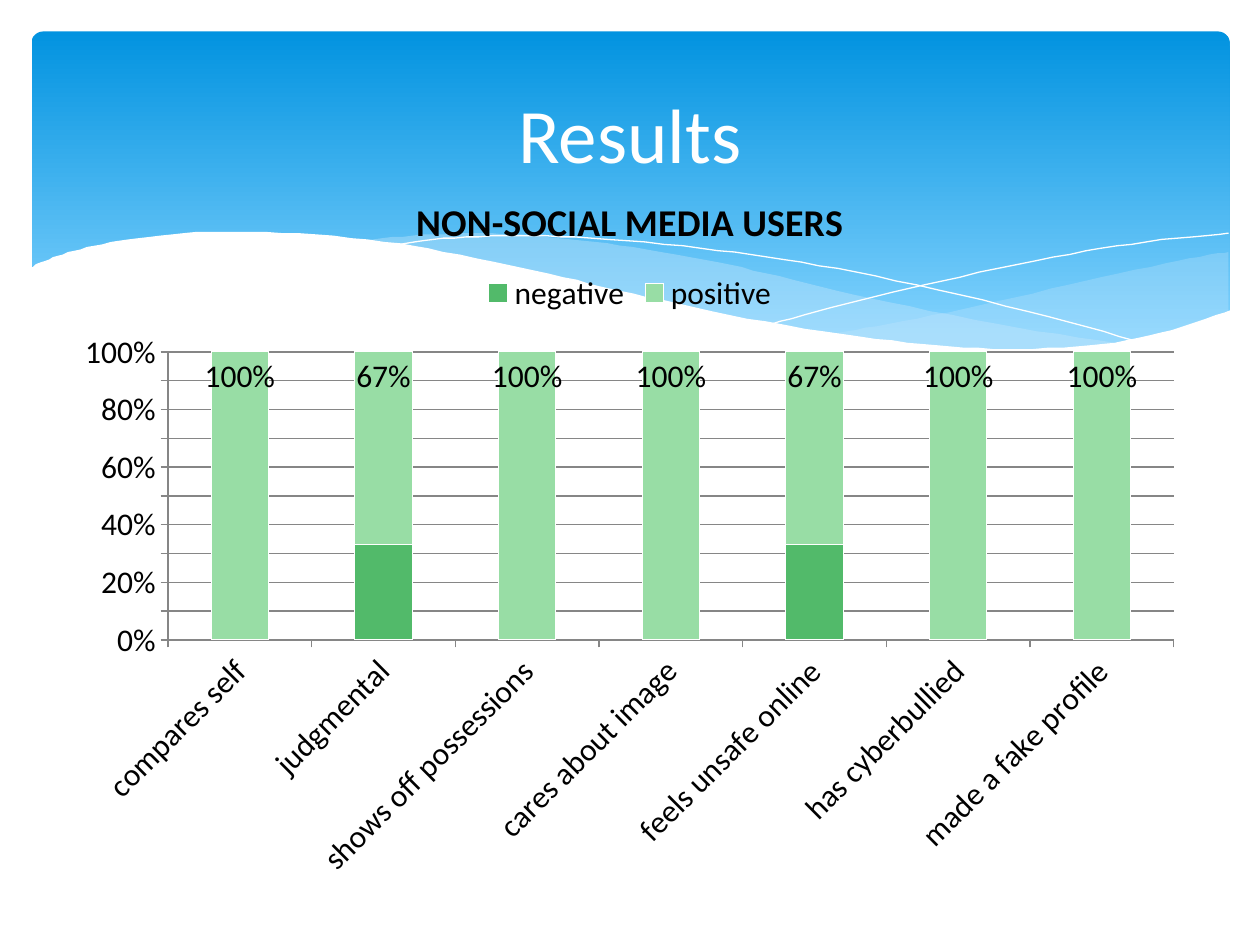
from dataclasses import dataclass
from lxml.etree import SubElement
from pptx import Presentation
from pptx.chart.data import CategoryChartData
from pptx.dml.color import RGBColor
from pptx.enum.chart import XL_CHART_TYPE as ChartType, XL_LABEL_POSITION as LabelPos
from pptx.enum.chart import XL_LEGEND_POSITION as LegendPos, XL_TICK_MARK as Tick
from pptx.enum.shapes import MSO_SHAPE as Preset
from pptx.enum.text import MSO_ANCHOR as Anchor, PP_ALIGN as Align
from pptx.oxml import parse_xml
from pptx.oxml.ns import nsdecls, qn
from pptx.util import Inches, Pt

WHITE = RGBColor(0xFF, 0xFF, 0xFF)
BLACK = RGBColor(0x00, 0x00, 0x00)
GREY = RGBColor(0x86, 0x86, 0x86)
SKY = RGBColor(0x02, 0x93, 0xE0)
PALE_SKY = RGBColor(0x83, 0xD3, 0xFE)
MIST = RGBColor(0xC6, 0xE7, 0xFC)
GREEN = RGBColor(0x52, 0xBA, 0x6A)
PALE_GREEN = RGBColor(0x98, 0xDD, 0xA5)
FONT = "Calibri"
CELL = Inches(0.01)

RIGHT_CREST = [(975, 16), (935, 23), (861, 39), (779, 58), (706, 73), (661, 81)]
RIGHT_TROUGH = [(661, 81), (719, 88), (781, 93), (835, 93), (889, 88), (935, 78), (975, 63)]
MIDDLE_CREST = [(893, 89), (807, 76), (706, 56), (629, 38), (569, 24), (502, 12),
                (442, 5), (380, 1), (328, 3), (286, 7)]
MIDDLE_TROUGH = [(286, 7), (362, 19), (449, 38), (566, 64), (665, 82), (748, 92),
                 (828, 94), (893, 89)]
FALLING_LINE = [(309, 11), (344, 6), (401, 3), (469, 5), (556, 13), (636, 24),
                (727, 42), (831, 67), (907, 88)]
RISING_LINE = [(613, 73), (672, 57), (748, 39), (836, 20), (910, 8), (975, 1)]
WHITE_EDGE = [(977, 62), (930, 78), (875, 89), (809, 93), (744, 90), (668, 81),
              (579, 66), (503, 49), (447, 36), (365, 18), (292, 6), (211, 0),
              (146, 1), (95, 7), (59, 15), (36, 23), (23, 29)]

CATEGORIES = ["compares self", "judgmental", "shows off possessions", "cares about image",
              "feels unsafe online", "has cyberbullied", "made a fake profile"]
NEGATIVE = [0, 0.33, 0, 0, 0.33, 0, 0]
POSITIVE = [1 - share for share in NEGATIVE]


@dataclass
class Box:
    """A region in columns and rows of the slide's 1000 by 750 grid."""
    left: int
    top: int
    width: int
    height: int

    def lengths(self):
        """Return left, top, width and height as slide lengths."""
        return [CELL * n for n in (self.left, self.top, self.width, self.height)]


def smooth(knots, steps=6):
    """Return points on a Catmull-Rom curve through the knots."""
    ends = [knots[0], *knots, knots[-1]]
    points = [knots[0]]
    for a, b, c, d in zip(ends, ends[1:], ends[2:], ends[3:]):
        for step in range(1, steps + 1):
            t = step / steps
            points.append(tuple(
                0.5 * (2 * q + (r - p) * t + (2 * p - 5 * q + 4 * r - s) * t ** 2
                       + (3 * q - p - 3 * r + s) * t ** 3)
                for p, q, r, s in zip(a, b, c, d)))
    return points


def add_outline(page, box, points, fill=None, opacity=100, line=None):
    """Draw a filled area, or an open hairline when no fill is given."""
    placed = [(box.left + x, box.top + y) for x, y in points]
    builder = page.shapes.build_freeform(*placed[0], scale=CELL)
    builder.add_line_segments(placed[1:], close=fill is not None)
    shape = builder.convert_to_shape()
    shape.shadow.inherit = False
    if fill is None:
        shape.fill.background()
        shape.line.color.rgb = line
        shape.line.width = Pt(0)
        return
    shape.fill.solid()
    shape.fill.fore_color.rgb = fill
    shape.line.fill.background()
    if opacity < 100:
        color = shape.fill._xPr.find(qn("a:solidFill"))[0]
        SubElement(color, qn("a:alpha"), val=str(opacity * 1000))


def add_banner(page, box):
    """Draw the rounded gradient band behind the title."""
    band = page.shapes.add_shape(Preset.ROUNDED_RECTANGLE, *box.lengths())
    band.adjustments[0] = 0.034
    band.shadow.inherit = False
    band.line.fill.background()
    band.fill.gradient()
    band.fill.gradient_angle = 270
    for stop, color, position in zip(band.fill.gradient_stops, (SKY, PALE_SKY), (0, 0.9)):
        stop.color.rgb = color
        stop.position = position


def add_waves(page, box):
    """Draw the translucent waves, hairlines and white lower edge."""
    add_outline(page, box, smooth(RIGHT_CREST) + smooth(RIGHT_TROUGH), MIST, 29)
    add_outline(page, box, smooth(MIDDLE_CREST) + smooth(MIDDLE_TROUGH), MIST, 40)
    for knots in (FALLING_LINE, RISING_LINE):
        add_outline(page, box, smooth(knots), line=WHITE)
    corners = [(23, box.height), (977, box.height)]
    add_outline(page, box, smooth(WHITE_EDGE) + corners, WHITE)


def set_font(font, size=18, color=BLACK, bold=False):
    """Apply the deck's typeface with a size, colour and weight."""
    font.name = FONT
    font.size = Pt(size)
    font.color.rgb = color
    font.bold = bold


def add_text(frame, text, **style):
    """Write one centred line of text in a frame."""
    para = frame.paragraphs[0]
    para.alignment = Align.CENTER
    span = para.add_run()
    span.text = text
    set_font(span.font, **style)


def add_title(page, box, text):
    """Write the slide title in the middle of its box."""
    frame = page.shapes.add_textbox(*box.lengths()).text_frame
    frame.word_wrap = True
    frame.vertical_anchor = Anchor.MIDDLE
    add_text(frame, text, size=44, color=WHITE)


def set_plot_area(chart, **shares):
    """Fix the inner plot area as shares of the chart's size."""
    area = chart._chartSpace.chart.plotArea
    for old in area.findall(qn("c:layout")):
        area.remove(old)
    sizes = "".join(f'<c:{key} val="{value}"/>' for key, value in shares.items())
    area.insert(0, parse_xml(
        f'<c:layout {nsdecls("c")}><c:manualLayout><c:layoutTarget val="inner"/>'
        f'<c:xMode val="edge"/><c:yMode val="edge"/>{sizes}</c:manualLayout></c:layout>'))


def add_results_chart(page, box):
    """Draw the stacked chart of negative and positive answers."""
    data = CategoryChartData(number_format="0%")
    data.categories = CATEGORIES
    data.add_series("negative", NEGATIVE)
    data.add_series("positive", POSITIVE)
    chart = page.shapes.add_chart(
        ChartType.COLUMN_STACKED_100, *box.lengths(), data).chart
    set_font(chart.font)
    add_text(chart.chart_title.text_frame, "NON-SOCIAL MEDIA USERS", size=21.6, bold=True)
    chart.chart_title.include_in_layout = False
    chart.has_legend = True
    chart.legend.position = LegendPos.TOP
    chart.legend.include_in_layout = False
    set_font(chart.legend.font)

    plot = chart.plots[0]
    plot.gap_width, plot.overlap, plot.vary_by_categories = 150, 100, False
    for series, color in zip(plot.series, (GREEN, PALE_GREEN)):
        series.format.fill.solid()
        series.format.fill.fore_color.rgb = color
        series.format.line.color.rgb = WHITE
    labels = plot.series[1].data_labels
    labels.show_value = True
    labels.position = LabelPos.INSIDE_END
    labels.number_format, labels.number_format_is_linked = "0%", False
    set_font(labels.font)

    names, scale = chart.category_axis, chart.value_axis
    for axis in (names, scale):
        axis.major_tick_mark, axis.minor_tick_mark = Tick.OUTSIDE, Tick.NONE
        axis.format.line.color.rgb = GREY
        set_font(axis.tick_labels.font)
    names._element.find(qn("c:txPr")).find(qn("a:bodyPr")).set("rot", "-2700000")
    scale.minimum_scale, scale.maximum_scale, scale.major_unit = 0, 1, 0.1
    scale.tick_labels.number_format = "0%"
    scale.tick_labels.number_format_is_linked = False
    scale.major_gridlines.format.line.color.rgb = GREY
    set_plot_area(chart, x=0.0926, y=0.2546, w=0.887, h=0.3975)


def main():
    """Build the results slide."""
    deck = Presentation()
    deck.slide_width, deck.slide_height = CELL * 1000, CELL * 750
    page = deck.slides.add_slide(deck.slide_layouts[6])
    add_banner(page, Box(25, 25, 951, 270))
    add_waves(page, Box(0, 184, 1000, 145))
    add_results_chart(page, Box(50, 133, 900, 575))
    add_title(page, Box(50, 37, 900, 137), "Results")
    deck.save("out.pptx")


if __name__ == "__main__":
    main()
